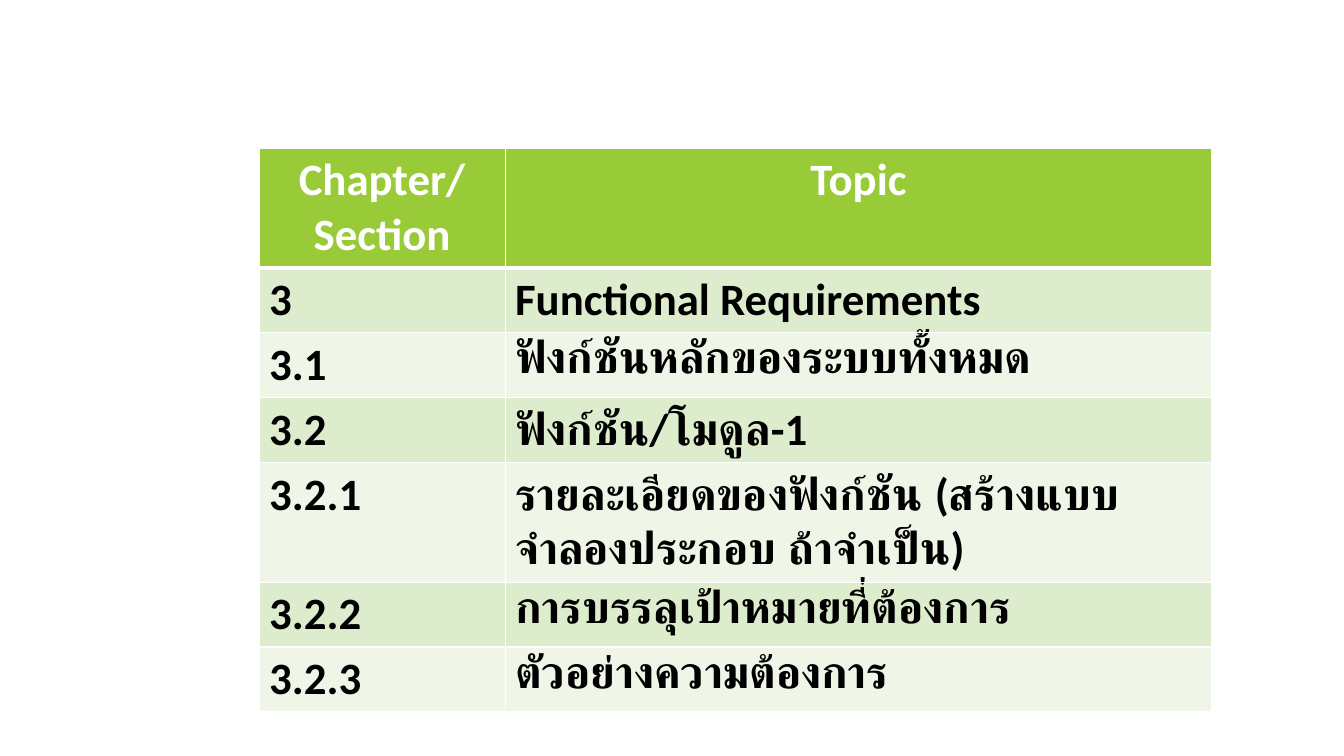
from dataclasses import dataclass

from lxml import etree
from pptx import Presentation
from pptx.dml.color import RGBColor
from pptx.enum.text import PP_ALIGN
from pptx.oxml.ns import qn
from pptx.util import Inches, Pt

CENTER, LEFT = PP_ALIGN.CENTER, PP_ALIGN.LEFT
BLANK_LAYOUT = 6


@dataclass(frozen=True)
class Theme:
    font: str = "Calibri"
    size: int = 32
    header_fill: str = "99CB38"
    header_text: str = "FFFFFF"
    band_fills: tuple = ("EFF6E8", "DEECCE")
    body_text: str = "000000"
    border: str = "FFFFFF"


THEME = Theme()

OUTLINE = [
    ("Chapter/Section", "Topic"),
    ("3", "Functional Requirements"),
    ("3.1", "ฟังก์ชันหลักของระบบทั้งหมด"),
    ("3.2", "ฟังก์ชัน/โมดูล-1"),
    ("3.2.1", "รายละเอียดของฟังก์ชัน (สร้างแบบจำลองประกอบ ถ้าจำเป็น)"),
    ("3.2.2", "การบรรลุเป้าหมายที่ต้องการ"),
    ("3.2.3", "ตัวอย่างความต้องการ"),
]
COLUMN_WIDTHS = (2.44, 7.01)
ROW_HEIGHT = 0.59


def add_borders(cell, bottom_width):
    """Draw 1 pt lines around the cell, with its own width at the bottom."""
    properties = cell._tc.get_or_add_tcPr()
    widths = {"a:lnL": 1, "a:lnR": 1, "a:lnT": 1, "a:lnB": bottom_width}
    for position, (side, width) in enumerate(widths.items()):
        line = etree.Element(qn(side), w=str(Pt(width)))
        fill = etree.SubElement(line, qn("a:solidFill"))
        etree.SubElement(fill, qn("a:srgbClr"), val=THEME.border)
        properties.insert(position, line)


presentation = Presentation()
presentation.slide_width = Inches(13.33)
presentation.slide_height = Inches(7.5)
slide = presentation.slides.add_slide(presentation.slide_layouts[BLANK_LAYOUT])

outline_table = slide.shapes.add_table(
    len(OUTLINE), len(COLUMN_WIDTHS), Inches(2.57), Inches(1.47),
    Inches(sum(COLUMN_WIDTHS)), Inches(ROW_HEIGHT * len(OUTLINE)),
).table
for column, width in zip(outline_table.columns, COLUMN_WIDTHS):
    column.width = Inches(width)

for row_index, entry in enumerate(OUTLINE):
    outline_table.rows[row_index].height = Inches(ROW_HEIGHT)
    is_header = row_index == 0
    fill = THEME.header_fill if is_header else THEME.band_fills[row_index % 2]
    text_color = THEME.header_text if is_header else THEME.body_text
    for column_index, text in enumerate(entry):
        cell = outline_table.cell(row_index, column_index)
        cell.text = text
        cell.fill.solid()
        cell.fill.fore_color.rgb = RGBColor.from_string(fill)
        add_borders(cell, bottom_width=3 if is_header else 1)
        paragraph = cell.text_frame.paragraphs[0]
        paragraph.alignment = CENTER if is_header else LEFT
        paragraph.font.name = THEME.font
        paragraph.font.size = Pt(THEME.size)
        paragraph.font.bold = True
        paragraph.font.color.rgb = RGBColor.from_string(text_color)

presentation.save("out.pptx")
